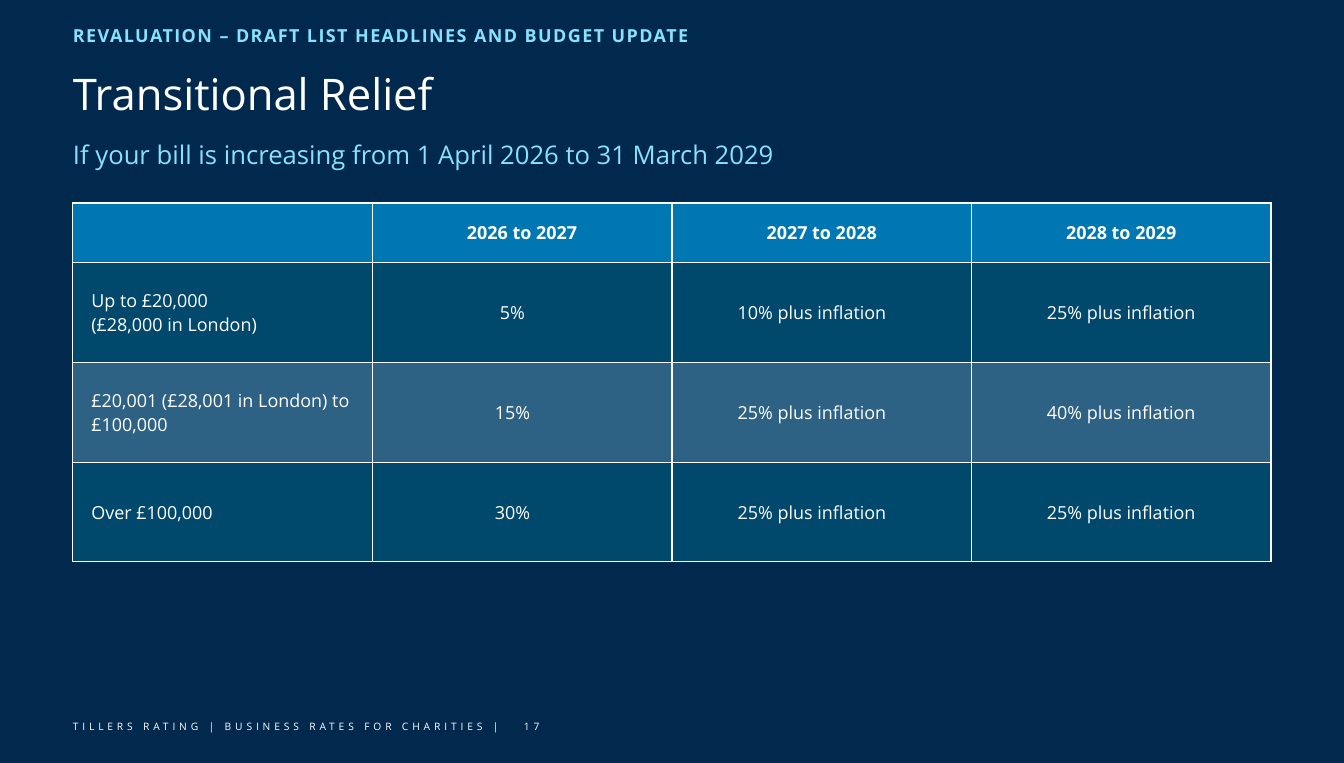
from lxml import etree
from pptx import Presentation
from pptx import util as u
from pptx.dml.color import RGBColor
from pptx.enum import text
from pptx.oxml.ns import qn

PX = 9144  # EMU per px, 100 px to the inch
FONT = "Open Sans"
COLORS = {
    "navy": "00294D",
    "sky": "88E2FF",
    "white": "FFFFFF",
    "header": "0077B3",
    "band_dark": "017B9F",
    "band_light": "79BEDD",
}
LEFT, WIDTH = 79, 1299
BAND_OPACITY = 39
HEADER_HEIGHT, BAND_HEIGHT = 65, 108

YEARS = ["", "2026 to 2027", "2027 to 2028", "2028 to 2029"]
RELIEF_BANDS = [
    ["Up to £20,000\v(£28,000 in London)", "5%", "10% plus inflation", "25% plus inflation"],
    ["£20,001 (£28,001 in London) to £100,000", "15%", "25% plus inflation", "40% plus inflation"],
    ["Over £100,000", "30%", "25% plus inflation", "25% plus inflation"],
]


def emu(*lengths):
    return [u.Emu(length * PX) for length in lengths]


def rgb(color):
    return RGBColor.from_string(COLORS[color])


def style_runs(paragraph, size, color, bold=False, tracking=0):
    """Format every run; tracking is in hundredths of a point."""
    for run in paragraph.runs:
        run.font.name = FONT
        run.font.size = u.Pt(size)
        run.font.bold = bold
        run.font.color.rgb = rgb(color)
        if tracking:
            run._r.get_or_add_rPr().set("spc", str(tracking))


def fill_text(shape, box, words, size, color, line=1.0, after=0, **look):
    shape.left, shape.top, shape.width, shape.height = emu(*box)
    frame = shape.text_frame
    frame.word_wrap = True
    frame.auto_size = text.MSO_AUTO_SIZE.NONE
    frame.vertical_anchor = text.MSO_ANCHOR.TOP
    frame.margin_left = frame.margin_top = frame.margin_right = frame.margin_bottom = 0
    frame.text = words
    paragraph = frame.paragraphs[0]
    properties = paragraph._p.get_or_add_pPr()
    properties.set("marL", "0")
    properties.set("indent", "0")
    etree.SubElement(properties, qn("a:buNone"))
    paragraph.alignment = text.PP_ALIGN.LEFT
    paragraph.line_spacing = line
    paragraph.space_before = u.Pt(0)
    paragraph.space_after = u.Pt(after)
    style_runs(paragraph, size, color, **look)


def add_text(slide, box, *args, **look):
    fill_text(slide.shapes.add_textbox(*emu(*box)), box, *args, **look)


def add_heading(slide, box):
    left, top, width, _ = box
    add_text(slide, (left, top, width, 34),
             "REVALUATION – DRAFT LIST HEADLINES AND BUDGET UPDATE",
             14, "sky", line=1.1, after=3, bold=True, tracking=110)
    fill_text(slide.shapes.title, (left, top + 55, width, 55),
              "Transitional Relief", 34, "white", line=0.9, after=7.5)
    fill_text(slide.placeholders[1], (left, top + 123, width, 34),
              "If your bill is increasing from 1 April 2026 to 31 March 2029",
              20, "sky", line=1.1, after=3)


def draw_borders(cell):
    properties = cell._tc.get_or_add_tcPr()
    for side in ("lnL", "lnR", "lnT", "lnB"):
        border = etree.SubElement(properties, qn(f"a:{side}"), w=str(u.Pt(1)))
        solid = etree.SubElement(border, qn("a:solidFill"))
        etree.SubElement(solid, qn("a:srgbClr"), val=COLORS["white"])


def paint(cell, color, opacity=100):
    cell.fill.solid()
    cell.fill.fore_color.rgb = rgb(color)
    if opacity < 100:
        tint = cell._tc.tcPr.find(f"{qn('a:solidFill')}/{qn('a:srgbClr')}")
        etree.SubElement(tint, qn("a:alpha"), val=str(opacity * 1000))


def set_band_margins(cell, column, last_column):
    cell.margin_top = cell.margin_bottom = 0
    cell.margin_left, cell.margin_right = emu(
        20 if column == 0 else 0, 0 if column == last_column else 21)


def add_relief_table(slide, box):
    rows = [YEARS] + RELIEF_BANDS
    table = slide.shapes.add_table(len(rows), len(YEARS), *emu(*box)).table
    table.horz_banding = False
    for r, row in enumerate(rows):
        is_header = r == 0
        table.rows[r].height = u.Emu((HEADER_HEIGHT if is_header else BAND_HEIGHT) * PX)
        for c, words in enumerate(row):
            cell = table.cell(r, c)
            draw_borders(cell)
            if is_header:
                paint(cell, "header")
            else:
                paint(cell, "band_dark" if r % 2 else "band_light", BAND_OPACITY)
                set_band_margins(cell, c, len(row) - 1)
            cell.vertical_anchor = text.MSO_ANCHOR.MIDDLE
            paragraph = cell.text_frame.paragraphs[0]
            paragraph.text = words
            paragraph.alignment = text.PP_ALIGN.CENTER if c else text.PP_ALIGN.LEFT
            style_runs(paragraph, 14, "white", bold=is_header)


def add_footer(slide, box):
    left, top, width, height = box
    look = dict(size=8, color="white", after=6, tracking=300)
    add_text(slide, (left, top, width, height),
             "TILLERS RATING | BUSINESS RATES FOR CHARITIES |", **look)
    add_text(slide, (left + 489, top, 32, 23), "17", **look)


def main():
    deck = Presentation()
    deck.slide_width, deck.slide_height = emu(1457, 827)
    slide = deck.slides.add_slide(deck.slide_layouts[1])
    slide.background.fill.solid()
    slide.background.fill.fore_color.rgb = rgb("navy")
    add_heading(slide, (LEFT, 24, WIDTH, 157))
    add_relief_table(slide, (LEFT, 220, WIDTH, HEADER_HEIGHT + 3 * BAND_HEIGHT))
    add_footer(slide, (LEFT, 781, 507, 46))
    deck.save("out.pptx")


if __name__ == "__main__":
    main()
